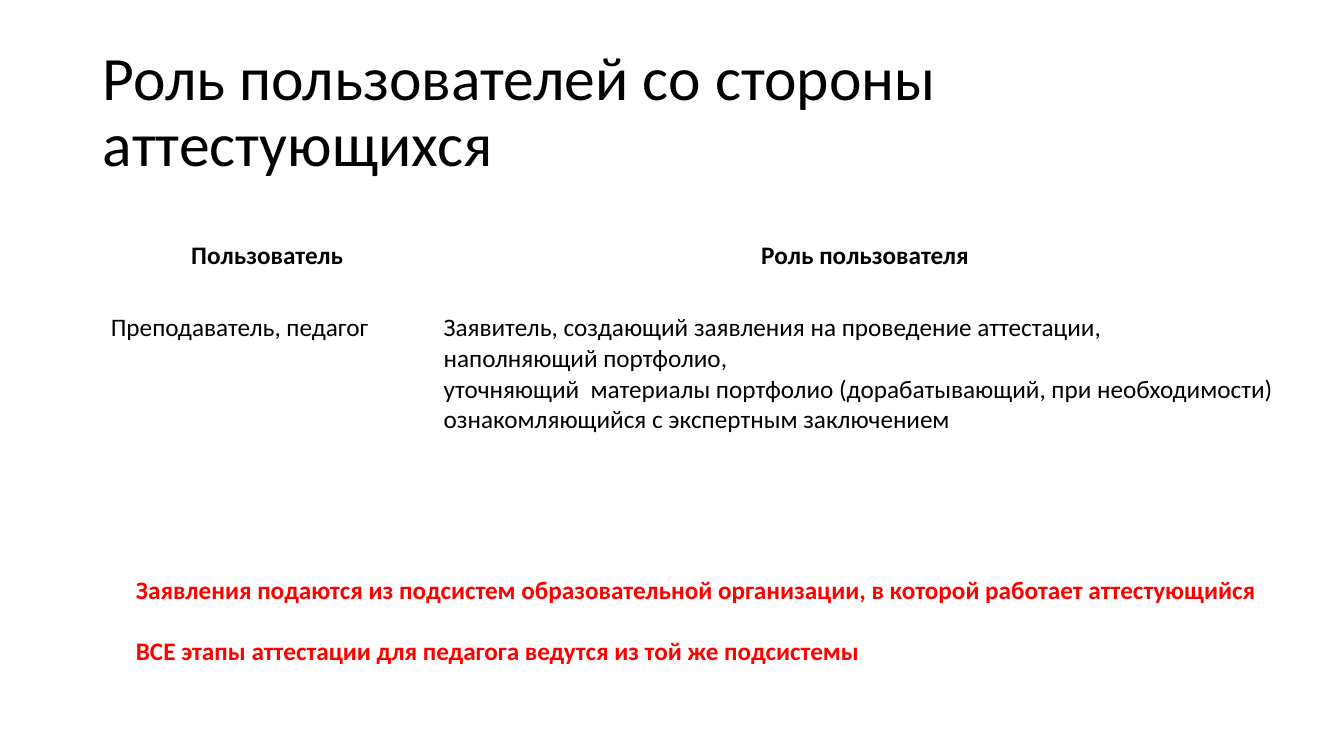
"""Build the slide on the roles of users who apply for certification."""
from dataclasses import dataclass

from pptx import Presentation
from pptx.dml.color import RGBColor
from pptx.enum.text import MSO_ANCHOR, MSO_AUTO_SIZE, PP_ALIGN
from pptx.slide import Slide
from pptx.text.text import TextFrame
from pptx.util import Inches, Length, Pt

LEFT, CENTER = PP_ALIGN.LEFT, PP_ALIGN.CENTER
MIDDLE = MSO_ANCHOR.MIDDLE
FIXED, GROW = MSO_AUTO_SIZE.NONE, MSO_AUTO_SIZE.SHAPE_TO_FIT_TEXT
SLIDE_WIDTH, SLIDE_HEIGHT = Inches(13.33), Inches(7.5)


@dataclass(frozen=True)
class Theme:
    """Font, colours and type sizes of the slide."""

    font: str = "Calibri"
    ink: RGBColor = RGBColor(0, 0, 0)
    accent: RGBColor = RGBColor(255, 0, 0)
    title_size: int = 44
    text_size: int = 18
    line_gap: int = 22


@dataclass(frozen=True)
class Area:
    """A rectangle in percent of the slide's width and height."""

    left: float
    top: float
    width: float
    height: float

    def box(self) -> tuple[Length, Length, Length, Length]:
        """Return left, top, width and height as lengths."""
        return across(self.left), down(self.top), across(self.width), down(self.height)


@dataclass(frozen=True)
class Row:
    """A table row: its height in percent, its cells and their format."""

    height: float
    cells: tuple[str, str] = ("", "")
    heading: bool = False
    margin_top: float = 0.05


THEME = Theme()
TITLE = "Роль пользователей со стороны аттестующихся"
TITLE_AREA = Area(6.9, 5.33, 86.27, 19.33)
TABLE_AREA = Area(7.5, 31.2, 88.97, 38)
NOTE_AREA = Area(9.38, 75.33, 85.45, 13.47)
COLUMN_WIDTHS = (24.76, 64.21)
ROWS = (
    Row(5.47, ("Пользователь", "Роль пользователя"), heading=True),
    Row(
        21.6,
        (
            "Преподаватель, педагог",
            "Заявитель, создающий заявления на проведение аттестации,\n"
            "наполняющий портфолио,\n"
            "уточняющий  материалы портфолио (дорабатывающий, при необходимости)\n"
            "ознакомляющийся с экспертным заключением",
        ),
        margin_top=0.35,
    ),
    Row(5.47),
    Row(5.47),
)
NOTE = (
    "Заявления подаются из подсистем образовательной организации, "
    "в которой работает аттестующийся\n"
    "ВСЕ этапы аттестации для педагога ведутся из той же подсистемы"
)


def across(percent: float) -> Length:
    """Turn a percentage of the slide's width into a length."""
    return Length(round(SLIDE_WIDTH * percent / 100))


def down(percent: float) -> Length:
    """Turn a percentage of the slide's height into a length."""
    return Length(round(SLIDE_HEIGHT * percent / 100))


def write(
    frame: TextFrame,
    text: str,
    *,
    size: int = THEME.text_size,
    color: RGBColor = THEME.ink,
    bold: bool = False,
    align: PP_ALIGN = LEFT,
    line_spacing: float = 1.0,
    gap: int = 0,
) -> None:
    """Write one paragraph per line of text in the given format."""
    frame.text = text
    for index, paragraph in enumerate(frame.paragraphs):
        paragraph.alignment = align
        paragraph.line_spacing = line_spacing
        paragraph.space_before = Pt(gap if index else 0)
        font = paragraph.font
        font.name, font.size, font.bold = THEME.font, Pt(size), bold
        font.color.rgb = color


def add_title(slide: Slide) -> None:
    """Place and fill the title placeholder."""
    title = slide.shapes.title
    title.left, title.top, title.width, title.height = TITLE_AREA.box()
    frame = title.text_frame
    frame.word_wrap, frame.auto_size, frame.vertical_anchor = True, FIXED, MIDDLE
    write(frame, TITLE, size=THEME.title_size, line_spacing=0.9)


def add_roles(slide: Slide) -> None:
    """Add the table of users and their roles."""
    table = slide.shapes.add_table(len(ROWS), len(COLUMN_WIDTHS), *TABLE_AREA.box()).table
    table.horz_banding = False
    for column, width in zip(table.columns, COLUMN_WIDTHS):
        column.width = across(width)
    for table_row, row in zip(table.rows, ROWS):
        table_row.height = down(row.height)
        for cell, text in zip(table_row.cells, row.cells):
            cell.fill.background()
            cell.margin_top = Inches(row.margin_top)
            align = CENTER if row.heading else LEFT
            write(cell.text_frame, text, bold=row.heading, align=align)


def add_note(slide: Slide) -> None:
    """Add the highlighted note under the table."""
    frame = slide.shapes.add_textbox(*NOTE_AREA.box()).text_frame
    frame.word_wrap, frame.auto_size = False, GROW
    write(frame, NOTE, color=THEME.accent, bold=True, gap=THEME.line_gap)


def main() -> None:
    """Build and save the presentation."""
    presentation = Presentation()
    presentation.slide_width, presentation.slide_height = SLIDE_WIDTH, SLIDE_HEIGHT
    slide = presentation.slides.add_slide(presentation.slide_layouts.get_by_name("Title Only"))
    add_title(slide)
    add_roles(slide)
    add_note(slide)
    presentation.save("out.pptx")


if __name__ == "__main__":
    main()
